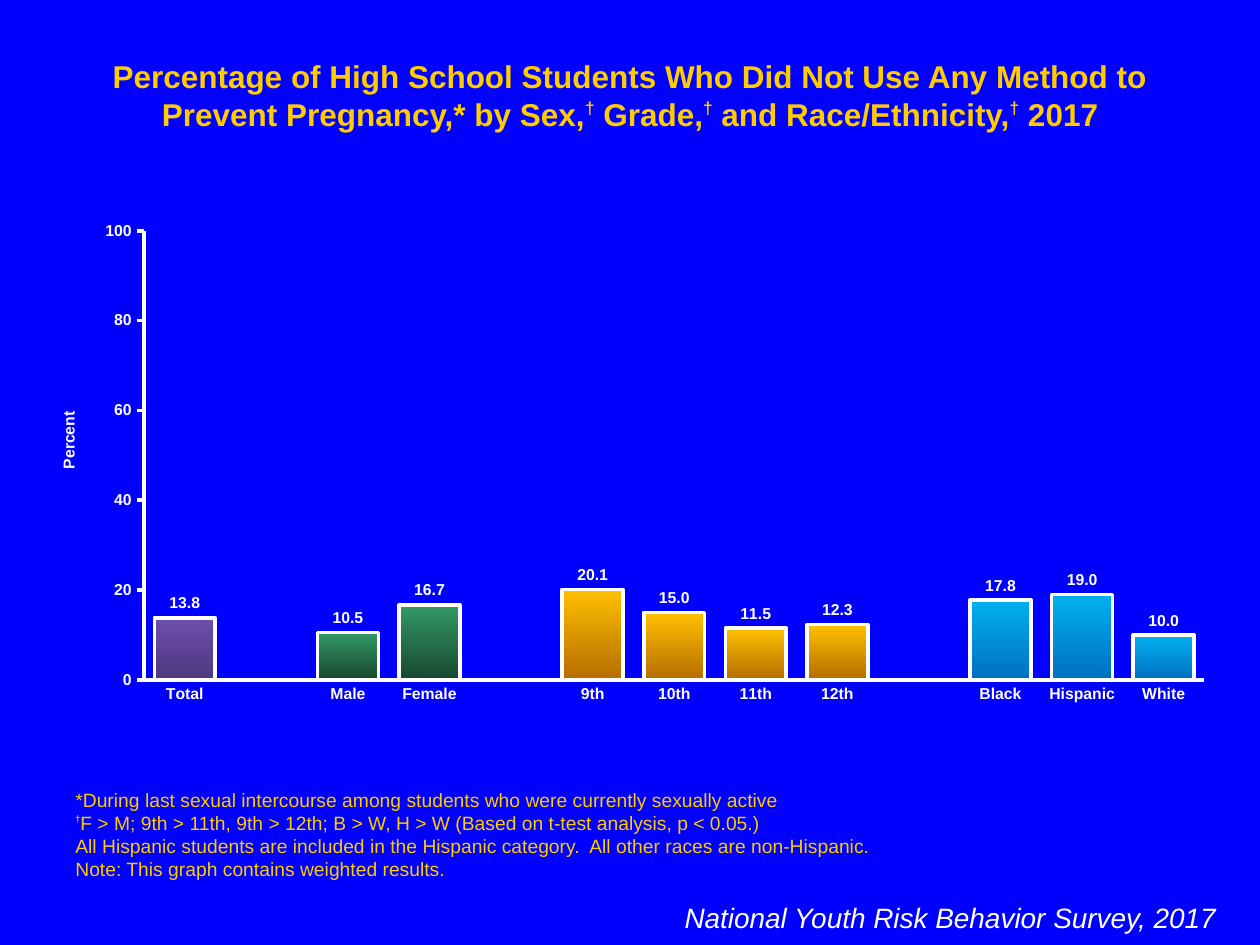
from dataclasses import dataclass

from lxml import etree
from pptx import Presentation
from pptx.chart.data import CategoryChartData
from pptx.dml.color import RGBColor
from pptx.enum.chart import XL_CHART_TYPE, XL_LABEL_POSITION, XL_TICK_MARK
from pptx.enum.text import MSO_ANCHOR, MSO_AUTO_SIZE, PP_ALIGN
from pptx.oxml.ns import qn
from pptx.util import Pt

COLUMN_CLUSTERED = XL_CHART_TYPE.COLUMN_CLUSTERED
OUTSIDE_END = XL_LABEL_POSITION.OUTSIDE_END
TICK_NONE, TICK_OUTSIDE = XL_TICK_MARK.NONE, XL_TICK_MARK.OUTSIDE
TOP, BOTTOM = MSO_ANCHOR.TOP, MSO_ANCHOR.BOTTOM
NO_AUTOSIZE = MSO_AUTO_SIZE.NONE
LEFT, CENTER, RIGHT = PP_ALIGN.LEFT, PP_ALIGN.CENTER, PP_ALIGN.RIGHT
TITLE_ONLY = 5
DOWNWARD = 270


@dataclass(frozen=True)
class Theme:
    font: str = "Arial"
    background: str = "0000FF"
    accent: str = "FFCC00"
    light: str = "FFFFFF"
    title_size: int = 18
    title_mark_size: int = 17
    note_size: int = 11
    note_mark_size: int = 9
    source_size: int = 16
    chart_size: int = 9
    line_width: int = 2


GRADIENTS = {
    "total": ("6E4EAE", "4F387C"),
    "sex": ("339966", "18472F"),
    "grade": ("FFC000", "B66D00"),
    "race": ("00B0F0", "0070C0"),
}
GROUPS = {
    "total": {"Total": 13.8},
    "sex": {"Male": 10.5, "Female": 16.7},
    "grade": {"9th": 20.1, "10th": 15.0, "11th": 11.5, "12th": 12.3},
    "race": {"Black": 17.8, "Hispanic": 19.0, "White": 10.0},
}
TITLE = ("Percentage of High School Students Who Did Not Use Any Method to "
         "Prevent Pregnancy,* by Sex,† Grade,† and Race/Ethnicity,† 2017")
NOTES = [
    "*During last sexual intercourse among students who were currently sexually active",
    "†F > M; 9th > 11th, 9th > 12th; B > W, H > W (Based on t-test analysis, p < 0.05.)",
    "All Hispanic students are included in the Hispanic category.  "
    "All other races are non-Hispanic.",
    "Note: This graph contains weighted results.",
]
SOURCE = "National Youth Risk Behavior Survey, 2017"


def apply(target, values):
    for name, value in values.items():
        setattr(target, name, value)


def set_layout(element, **fractions):
    """Place a chart part by fractions of the chart area."""
    layout = element.find(qn("c:layout"))
    if layout is None:
        layout = etree.Element(qn("c:layout"))
        element.insert(0, layout)
    manual = etree.SubElement(layout, qn("c:manualLayout"))
    settings = {"xMode": "edge", "yMode": "edge", **fractions}
    if "w" in fractions:
        settings = {"layoutTarget": "inner", **settings}
    for name, value in settings.items():
        etree.SubElement(manual, qn(f"c:{name}")).set("val", str(value))


class SlideBuilder:
    """Holds the theme and the slide being filled."""

    def __init__(self, slide, theme):
        self.slide = slide
        self.theme = theme
        fill = slide.background.fill
        fill.solid()
        fill.fore_color.rgb = RGBColor.from_string(theme.background)

    def format_font(self, font, color, **values):
        apply(font, {"name": self.theme.font, **values})
        font.color.rgb = RGBColor.from_string(color)

    def format_line(self, line):
        line.width = Pt(self.theme.line_width)
        line.color.rgb = RGBColor.from_string(self.theme.light)

    def fill_text(self, frame, lines, color, size, align=LEFT, anchor=TOP,
                  mark=None, **style):
        """Fill a frame; each † is raised, with size, baseline and style from mark."""
        apply(frame, {"word_wrap": True, "auto_size": NO_AUTOSIZE,
                      "vertical_anchor": anchor})
        for index, line in enumerate(lines):
            paragraph = frame.add_paragraph() if index else frame.paragraphs[0]
            paragraph.alignment = align
            for position, text in enumerate(line.split("†")):
                if position:
                    mark_size, baseline, mark_style = mark
                    run = paragraph.add_run()
                    run.text = "†"
                    self.format_font(run.font, color, size=Pt(mark_size),
                                     **{**style, **mark_style})
                    run._r.get_or_add_rPr().set("baseline", str(baseline * 1000))
                if text:
                    run = paragraph.add_run()
                    run.text = text
                    self.format_font(run.font, color, size=Pt(size), **style)

    def title(self, text, left, top, width, height):
        title = self.slide.shapes.title
        apply(title, {"left": Pt(left), "top": Pt(top),
                      "width": Pt(width), "height": Pt(height)})
        theme = self.theme
        self.fill_text(title.text_frame, [text], theme.accent, theme.title_size, CENTER,
                       mark=(theme.title_mark_size, 40, {}), bold=True)

    def text_box(self, lines, left, top, width, height, **format_values):
        box = self.slide.shapes.add_textbox(Pt(left), Pt(top), Pt(width), Pt(height))
        self.fill_text(box.text_frame, lines, **format_values)

    def column_chart(self, groups, left, top, width, height):
        """Draw grouped columns with an empty category between groups."""
        columns = []
        for group, values in groups.items():
            if columns:
                columns.append((None, "", None))
            columns += [(group, name, value) for name, value in values.items()]
        data = CategoryChartData()
        data.categories = [name for _, name, _ in columns]
        data.add_series("Series 1", [value for _, _, value in columns])
        chart = self.slide.shapes.add_chart(
            COLUMN_CLUSTERED, Pt(left), Pt(top), Pt(width), Pt(height), data).chart
        apply(chart, {"has_legend": False, "has_title": False})
        font_values = {"size": Pt(self.theme.chart_size), "bold": True}
        self.format_font(chart.font, self.theme.light, **font_values)
        set_layout(chart._chartSpace.chart.plotArea, x=0.094, y=0.036, w=0.886, h=0.895)

        plot = chart.plots[0]
        apply(plot, {"gap_width": 34, "overlap": 100, "vary_by_categories": False,
                     "has_data_labels": True})
        apply(plot.data_labels, {"show_value": True, "number_format": "#,##0.0",
                                 "number_format_is_linked": False,
                                 "position": OUTSIDE_END})
        self.format_font(plot.data_labels.font, self.theme.light, **font_values)
        self.axes(chart, font_values)

        for index, (group, _, _) in enumerate(columns):
            if group:
                point = plot.series[0].points[index].format
                point.fill.gradient()
                point.fill.gradient_angle = DOWNWARD
                for stop, color in zip(point.fill.gradient_stops, GRADIENTS[group]):
                    stop.color.rgb = RGBColor.from_string(color)
                self.format_line(point.line)

    def axes(self, chart, font_values):
        value_axis = chart.value_axis
        apply(value_axis, {"minimum_scale": 0, "maximum_scale": 100, "major_unit": 20})
        for axis, tick in ((chart.category_axis, TICK_NONE), (value_axis, TICK_OUTSIDE)):
            apply(axis, {"has_major_gridlines": False, "major_tick_mark": tick,
                         "minor_tick_mark": TICK_NONE})
            self.format_line(axis.format.line)
            self.format_font(axis.tick_labels.font, self.theme.light, **font_values)
        frame = value_axis.axis_title.text_frame
        frame.text = "Percent"
        frame._txBody.bodyPr.set("rot", "-5400000")
        frame._txBody.bodyPr.set("vert", "horz")
        self.format_font(frame.paragraphs[0].runs[0].font, self.theme.light, **font_values)
        set_layout(value_axis.axis_title._element, x=0.02, y=0.39)


def main():
    theme = Theme()
    presentation = Presentation()
    apply(presentation, {"slide_width": Pt(720), "slide_height": Pt(540)})
    slide = presentation.slides.add_slide(presentation.slide_layouts[TITLE_ONLY])
    builder = SlideBuilder(slide, theme)
    builder.title(TITLE, 36, 28.8, 648, 28.8)
    builder.text_box(NOTES, 36, 486, 648, 20.9, color=theme.accent,
                     size=theme.note_size, anchor=BOTTOM,
                     mark=(theme.note_mark_size, 50, {"bold": True}))
    builder.text_box([SOURCE], 306, 511.2, 396, 28.8, color=theme.light,
                     size=theme.source_size, align=RIGHT, italic=True)
    builder.column_chart(GROUPS, 18, 121.7, 684, 286.6)
    presentation.save("out.pptx")


if __name__ == "__main__":
    main()
